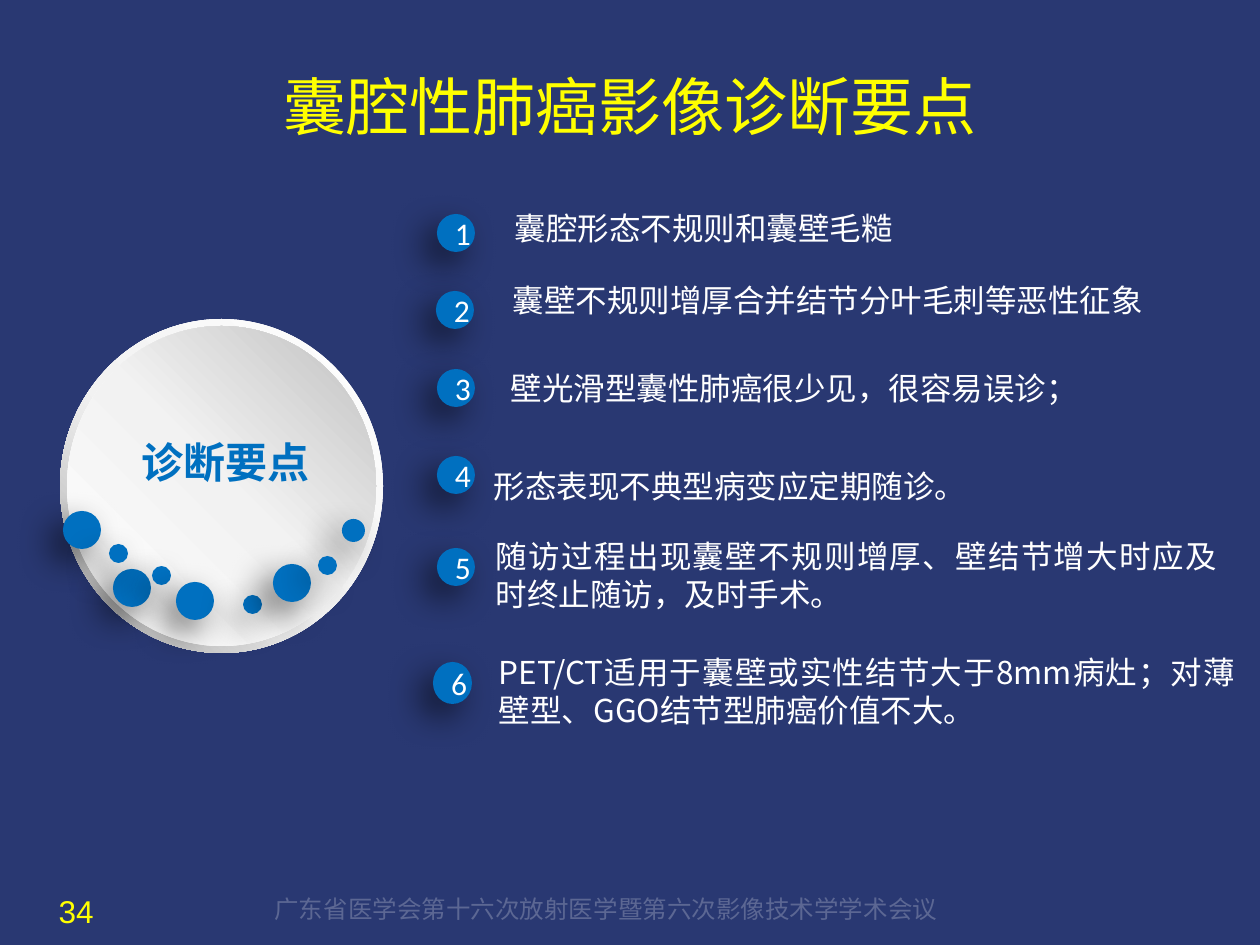
from lxml import etree
from pptx import Presentation
from pptx.dml.color import RGBColor
from pptx.enum.shapes import MSO_SHAPE as SHAPE
from pptx.enum.text import MSO_ANCHOR as ANCHOR, PP_ALIGN as ALIGN
from pptx.oxml.ns import qn
from pptx.util import Pt

PX = 914400 / 126
SANS = "Noto Sans CJK SC"
COLORS = {"bg": "293872", "blue": "0070C0", "yellow": "FFFF00", "white": "FFFFFF",
          "pale": "F2F2F2", "silver": "BFBFBF", "gray": "A6A6A6", "black": "000000"}


def set_text(s, text, size, color, font=SANS, align=ALIGN.LEFT, anchor=ANCHOR.TOP):
    tf = s.text_frame
    tf.word_wrap = True
    tf.vertical_anchor = anchor
    tf.text = text
    p = tf.paragraphs[0]
    p.alignment = align
    r = p.runs[0]
    r.font.size = Pt(size)
    r.font.name = font
    r.font.color.rgb = RGBColor.from_string(COLORS[color])
    etree.SubElement(r.font._element, qn("a:ea"), typeface=font)
    return p


def add_dot(x, y, w, h):
    s = sp.add_shape(SHAPE.OVAL, *[round(v * PX) for v in (x, y, w, h)])
    s.fill.solid()
    s.fill.fore_color.rgb = RGBColor.from_string(COLORS["blue"])
    s.line.fill.background()
    s.shadow.inherit = False
    effects = s._element.spPr.find(qn("a:effectLst"))
    shadow = etree.SubElement(effects, qn("a:outerShdw"), blurRad=str(Pt(20)), dist=str(Pt(10)),
                              dir="8100000", algn="tr", rotWithShape="0")
    clr = etree.SubElement(shadow, qn("a:srgbClr"), val=COLORS["black"])
    etree.SubElement(clr, qn("a:alpha"), val="60000")
    return s


prs = Presentation()
prs.slide_width = round(1260 * PX)
prs.slide_height = round(945 * PX)
slide = prs.slides.add_slide(prs.slide_layouts[6])
slide.background.fill.solid()
slide.background.fill.fore_color.rgb = RGBColor.from_string(COLORS["bg"])
sp = slide.shapes

footer = sp.add_textbox(*[round(v * PX) for v in (262, 879, 736, 52)])
p = set_text(footer, "广东省医学会第十六次放射医学暨第六次影像技术学学术会议", 14, "white")
p.line_spacing = 1.3
clr = p.runs[0].font._element.find(".//" + qn("a:srgbClr"))
etree.SubElement(clr, qn("a:alpha"), val="24000")

title = sp.add_textbox(*[round(v * PX) for v in (63, 38, 1134, 135)])
set_text(title, "囊腔性肺癌影像诊断要点", 36, "yellow", align=ALIGN.CENTER, anchor=ANCHOR.MIDDLE)

page = sp.add_textbox(*[round(v * PX) for v in (20, 886, 86, 50)])
set_text(page, "34", 18, "yellow", "Arial", ALIGN.RIGHT, ANCHOR.MIDDLE)

plate = sp.add_group_shape()
for kind, box, stops, angle in [
    (SHAPE.DONUT, (60, 319, 323, 334), [(0, "white"), (55, "pale"), (100, "gray")], 135),
    (SHAPE.OVAL, (67, 326, 309, 320), [(0, "white"), (51, "pale"), (100, "silver")], 315),
]:
    s = plate.shapes.add_shape(kind, *[round(v * PX) for v in box])
    if kind == SHAPE.DONUT:
        s.adjustments[0] = 0.05
    s.line.fill.background()
    s.shadow.inherit = False
    s.fill.gradient()
    grad = s._element.spPr.find(qn("a:gradFill"))
    gs_list = grad.find(qn("a:gsLst"))
    for gs in list(gs_list):
        gs_list.remove(gs)
    for pos, color in stops:
        gs = etree.SubElement(gs_list, qn("a:gs"), pos=str(pos * 1000))
        etree.SubElement(gs, qn("a:srgbClr"), val=COLORS[color])
    grad.find(qn("a:lin")).set("ang", str(angle * 60000))

for x, y, d in [(113, 569, 38), (152, 566, 19), (176, 582, 38), (243, 595, 19), (63, 511, 38),
                (109, 544, 19), (273, 564, 38), (342, 519, 23), (318, 556, 19)]:
    add_dot(x, y, d, d)

label = sp.add_textbox(*[round(v * PX) for v in (129, 437, 193, 50)])
p = set_text(label, "诊断要点", 24, "blue", align=ALIGN.CENTER)
p.runs[0].font.bold = True
tf = label.text_frame
tf.margin_left = tf.margin_top = tf.margin_right = tf.margin_bottom = 0

points = [
    ((437, 214, 38, 38), (515, 224, 541, 23), 13, "囊腔形态不规则和囊壁毛糙"),
    ((436, 291, 38, 38), (513, 296, 684, 23), 13, "囊壁不规则增厚合并结节分叶毛刺等恶性征象"),
    ((437, 369, 38, 38), (511, 369, 723, 38), None, "壁光滑型囊性肺癌很少见，很容易误诊；"),
    ((437, 456, 38, 38), (494, 467, 723, 38), None, "形态表现不典型病变应定期随诊。"),
    ((437, 548, 38, 38), (496, 537, 721, 77), None,
     "随访过程出现囊壁不规则增厚、壁结节增大时应及时终止随访，及时手术。"),
    ((433, 662, 39, 42), (499, 653, 736, 77), None,
     "PET/CT适用于囊壁或实性结节大于8mm病灶；对薄壁型、GGO结节型肺癌价值不大。"),
]
for number, (dot, box, spacing, text) in enumerate(points, 1):
    s = add_dot(*dot)
    set_text(s, str(number), 18, "white", "Calibri", ALIGN.CENTER, ANCHOR.MIDDLE)
    s = sp.add_textbox(*[round(v * PX) for v in box])
    p = set_text(s, text, 18, "white", align=ALIGN.JUSTIFY)
    if spacing:
        p.line_spacing = Pt(spacing)
    tf = s.text_frame
    tf.margin_left = tf.margin_top = tf.margin_right = tf.margin_bottom = 0

prs.save("out.pptx")
